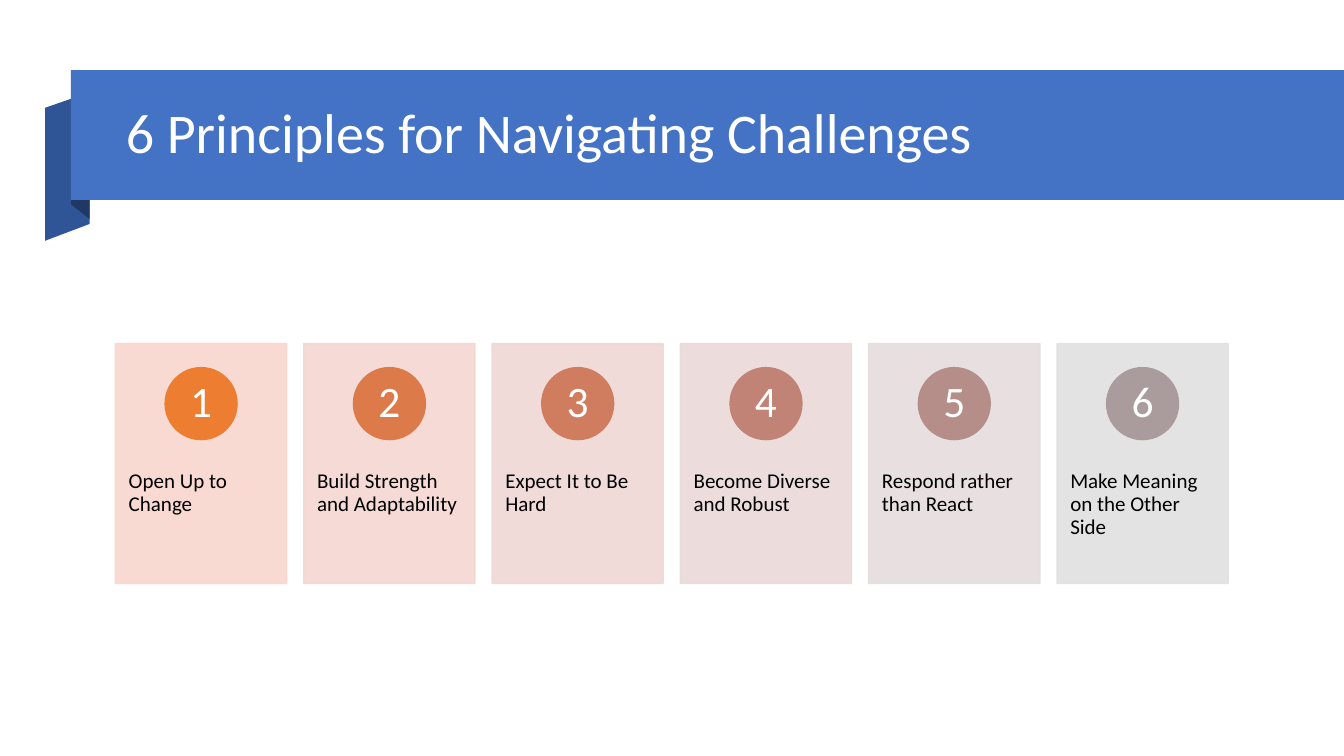
"""Build a slide with a folded ribbon title and six numbered principle cards."""
from dataclasses import dataclass

import lxml.etree
import pptx
import pptx.dml.color
import pptx.enum.shapes
import pptx.enum.text
import pptx.oxml.ns
import pptx.util

Pt = pptx.util.Pt
SHAPE = pptx.enum.shapes.MSO_SHAPE
ALIGN = pptx.enum.text.PP_ALIGN
ANCHOR = pptx.enum.text.MSO_ANCHOR


@dataclass(frozen=True)
class Theme:
    font: str = "Calibri"
    ribbon: str = "4472C4"
    tail: str = "2F5597"
    fold: str = "203864"
    light: str = "FFFFFF"
    dark: str = "000000"
    cards: tuple = ("F8D7CE", "F4D7D1", "EFD8D5", "EADAD9", "E6DDDD", "E1E1E1")
    circles: tuple = ("ED7D31", "DD7A49", "CF7C5F", "C18375", "B58E89", "AA9C9C")
    title_size: int = 40
    number_size: int = 31
    label_size: int = 15


theme = Theme()


def paint(sp, color, outlined=False, opacity=100):
    sp.shadow.inherit = False
    fills = [sp.fill]
    if outlined:
        sp.line.width = Pt(1)
        fills.append(sp.line.fill)
    else:
        sp.line.fill.background()
    for fill in fills:
        fill.solid()
        fill.fore_color.rgb = pptx.dml.color.RGBColor.from_string(color)
    if opacity < 100:
        for clr in sp.element.spPr.iter(pptx.oxml.ns.qn("a:srgbClr")):
            alpha = lxml.etree.SubElement(clr, pptx.oxml.ns.qn("a:alpha"))
            alpha.set("val", str(opacity * 1000))


def write(sp, text, size, color, align, anchor, insets):
    tf = sp.text_frame
    tf.word_wrap = True
    tf.vertical_anchor = anchor
    tf.margin_left, tf.margin_top, tf.margin_right, tf.margin_bottom = map(Pt, insets)
    p = tf.paragraphs[0]
    p.text = text
    p.alignment = align
    p.line_spacing = 0.9
    font = p.runs[0].font
    font.name = theme.font
    font.size = Pt(size)
    font.color.rgb = pptx.dml.color.RGBColor.from_string(color)


prs = pptx.Presentation()
prs.slide_width, prs.slide_height = Pt(960), Pt(540)
s = prs.slides.add_slide(prs.slide_layouts[6])

ribbon_folds = [
    (theme.tail, [(64, 160), (32.2, 172), (32.2, 77), (64, 66)]),
    (theme.fold, [(64, 156.5), (50.8, 146), (50.8, 50.2), (64, 61)]),
]
for color, points in ribbon_folds:
    corners = [(Pt(x), Pt(y)) for x, y in points]
    builder = s.shapes.build_freeform(*corners[0])
    builder.add_line_segments(corners[1:], close=True)
    paint(builder.convert_to_shape(), color)

ribbon = s.shapes.add_shape(SHAPE.RECTANGLE, Pt(50.6), Pt(50.2), Pt(909.4), Pt(92.7))
paint(ribbon, theme.ribbon)
title = s.shapes.add_textbox(Pt(82.8), Pt(62), Pt(811.5), Pt(69))
write(title, "6 Principles for Navigating Challenges", theme.title_size, theme.light,
      ALIGN.LEFT, ANCHOR.MIDDLE, (7.2, 3.6, 7.2, 3.6))

principles = [
    "Open Up to Change",
    "Build Strength and Adaptability",
    "Expect It to Be Hard",
    "Become Diverse and Robust",
    "Respond rather than React",
    "Make Meaning on the Other Side",
]
left, top, pitch = 82.5, 245.5, 134.5
width, height, diameter = 122.3, 171.2, 51.4

for i, principle in enumerate(principles):
    x = left + i * pitch
    card = s.shapes.add_shape(SHAPE.RECTANGLE, Pt(x), Pt(top), Pt(width), Pt(height))
    paint(card, theme.cards[i], outlined=True, opacity=90)
    write(card, principle, theme.label_size, theme.dark,
          ALIGN.LEFT, ANCHOR.TOP, (9.5, 90.7, 9.5, 29.5))

    circle = s.shapes.add_shape(SHAPE.OVAL, Pt(x + (width - diameter) / 2), Pt(top + 17.1),
                                Pt(diameter), Pt(diameter))
    paint(circle, theme.circles[i], outlined=True)
    write(circle, str(i + 1), theme.number_size, theme.light,
          ALIGN.CENTER, ANCHOR.MIDDLE, (0, 0, 0, 0))

prs.save("out.pptx")
